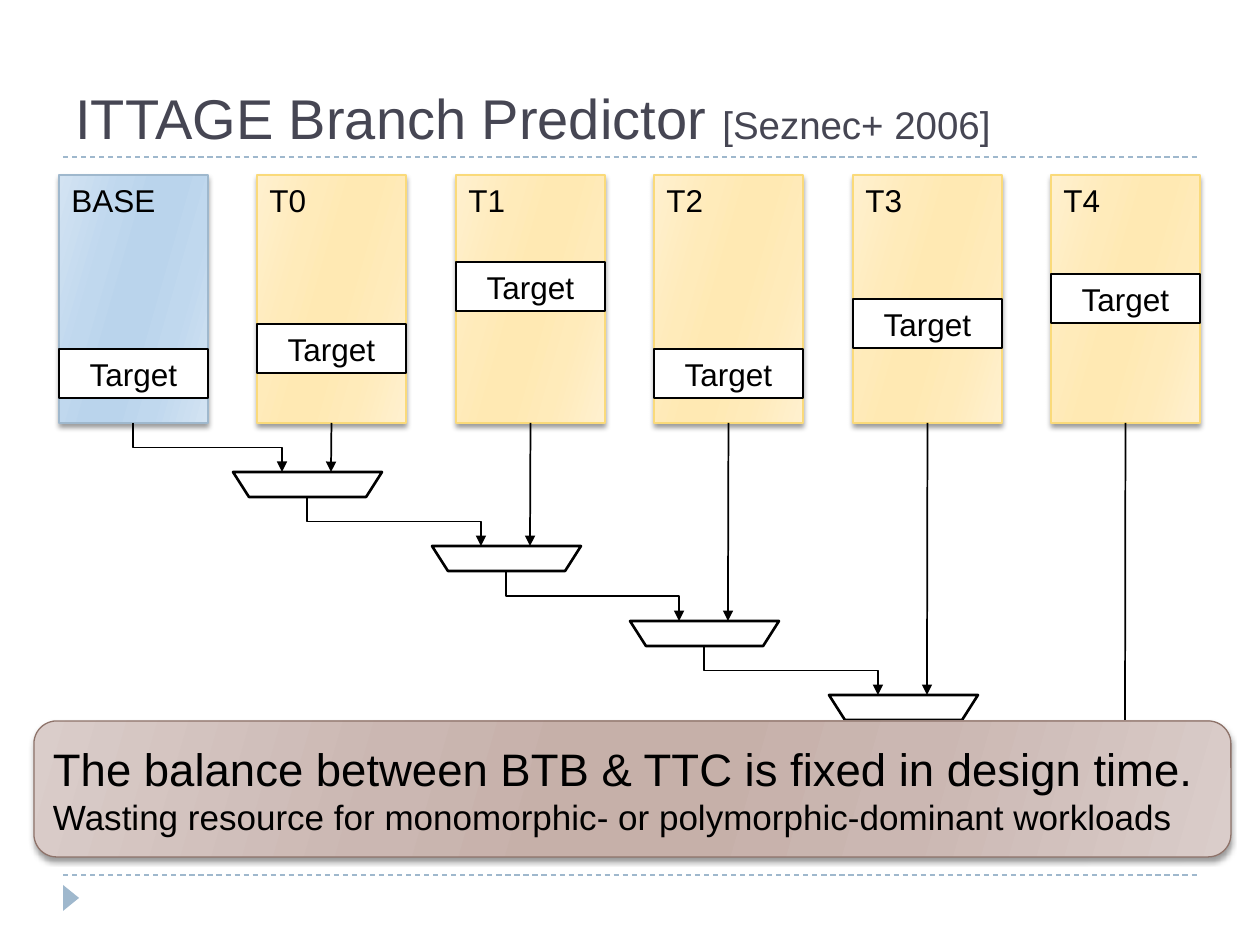
from pptx import Presentation
from pptx import util as u
from pptx.dml.color import RGBColor
from pptx.enum import dml, shapes, text
from pptx.oxml import parse_xml
from pptx.oxml.ns import nsdecls, qn

SCALE = 914400 / 126
BLACK = RGBColor(0, 0, 0)
WHITE = RGBColor(255, 255, 255)
SLATE = RGBColor(0x46, 0x46, 0x53)
BLUE = RGBColor(0x9F, 0xB8, 0xCD)
GOLD = RGBColor(0xFA, 0xDA, 0x7A)
BROWN = RGBColor(0x8E, 0x73, 0x6A)
SKY = [RGBColor(0xD3, 0xE3, 0xF2), RGBColor(0xC0, 0xD8, 0xEE), RGBColor(0xBA, 0xD4, 0xEC)]
CREAM = [RGBColor(0xFF, 0xF0, 0xCF), RGBColor(0xFF, 0xEB, 0xBA), RGBColor(0xFF, 0xE9, 0xB3)]
ROSE = [RGBColor(0xDA, 0xCD, 0xCA), RGBColor(0xCB, 0xB7, 0xB2), RGBColor(0xC6, 0xB0, 0xA9)]
KIND = shapes.MSO_SHAPE
MIDDLE = text.MSO_ANCHOR.MIDDLE
COL_W, COL_H = 149, 248
MUX_H = 25


def px(*vals):
    return [u.Emu(round(v * SCALE)) for v in vals]


def style(item, form):
    for key, val in form.items():
        setattr(item, key, val)


def write(shape, rows, align=text.PP_ALIGN.LEFT, **form):
    frame = shape.text_frame
    style(frame, {"word_wrap": True, **form})
    for i, row in enumerate(rows):
        para = frame.add_paragraph() if i else frame.paragraphs[0]
        para.alignment = align
        for words, size, tint in row:
            run = para.add_run()
            run.text = words
            style(run.font, {"name": "Arial", "size": u.Pt(size)})
            run.font.color.rgb = tint


def shape(slide, kind, box, fill, edge=None, width=1.5):
    item = slide.shapes.add_shape(kind, *px(*box))
    item.shadow.inherit = False
    item.fill.solid()
    item.fill.fore_color.rgb = fill
    if edge is None:
        item.line.fill.background()
    else:
        item.line.color.rgb = edge
        item.line.width = u.Pt(width)
    return item


def panel(slide, kind, box, tones, edge):
    item = shape(slide, kind, box, WHITE, edge, 0.75)
    item.fill.gradient()
    props = item._element.spPr
    stops = "".join(
        f'<a:gs pos="{pos * 1000}"><a:srgbClr val="{tone}"/></a:gs>'
        for pos, tone in zip((0, 30, 45, 55, 73, 100), tones + tones[::-1]))
    props.replace(props.find(qn("a:gradFill")), parse_xml(
        f'<a:gradFill {nsdecls("a")} rotWithShape="1"><a:gsLst>{stops}</a:gsLst>'
        '<a:lin ang="960000" scaled="1"/></a:gradFill>'))
    props.find(qn("a:effectLst")).append(parse_xml(
        f'<a:outerShdw {nsdecls("a")} blurRad="38100" dist="25400" dir="5400000" '
        'rotWithShape="0"><a:srgbClr val="000000"><a:alpha val="40000"/>'
        '</a:srgbClr></a:outerShdw>'))
    return item


def line(slide, kind, ends, tint, width):
    item = slide.shapes.add_connector(kind, *px(*ends))
    item.line.color.rgb = tint
    item.line.width = u.Pt(width)
    item._element.spPr.append(parse_xml(f'<a:effectLst {nsdecls("a")}/>'))
    return item


def arrow(slide, x1, y1, x2, y2, root=None):
    if x1 == x2:
        item = line(slide, shapes.MSO_CONNECTOR.STRAIGHT, (x1, y1, x2, y2), BLACK, 1)
        if root is not None:
            item.begin_connect(root, 2)
    else:
        mid_x, mid_y = (x1 + x2) / 2, (y1 + y2) / 2
        half_w, half_h = (y2 - y1) / 2, (x2 - x1) / 2
        ends = (mid_x - half_w, mid_y - half_h, mid_x + half_w, mid_y + half_h)
        item = line(slide, shapes.MSO_CONNECTOR.ELBOW, ends, BLACK, 1)
        form = item._element.spPr.find(qn("a:xfrm"))
        form.set("rot", "16200000")
        form.set("flipH", "1")
    item.line._get_or_add_ln().append(parse_xml(
        f'<a:tailEnd {nsdecls("a")} type="triangle"/>'))


def table(slide, x, y, name, drop, tones, edge):
    body = panel(slide, KIND.RECTANGLE, (x, y, COL_W, COL_H), tones, edge)
    entry = shape(slide, KIND.RECTANGLE, (x, y + drop, COL_W, 49), WHITE, BLACK)
    write(entry, [[("Target", 18, BLACK)]], text.PP_ALIGN.CENTER, vertical_anchor=MIDDLE)
    label = slide.shapes.add_textbox(*px(x, y, COL_W, 50))
    write(label, [[(name, 18, BLACK)]], auto_size=text.MSO_AUTO_SIZE.SHAPE_TO_FIT_TEXT)
    return body


def mux(slide, x, y):
    item = shape(slide, KIND.TRAPEZOID, (x, y, COL_W, MUX_H), WHITE, BLACK)
    item.rotation = 180
    item.adjustments[0] = 0.638


def chain(slide, x, y):
    names = ("BASE", "T0", "T1", "T2", "T3", "T4")
    drops = (174, 149, 87, 174, 124, 99)
    mid = COL_W // 2
    foot = y + COL_H
    last_x, last_y = x + mid, foot
    for i, (name, drop) in enumerate(zip(names, drops)):
        left = x + 397 * i // 2
        tones, edge = (CREAM, GOLD) if i else (SKY, BLUE)
        body = table(slide, left, y, name, drop, tones, edge)
        if i:
            top = foot + 49 + 149 * (i - 1) // 2
            gate = left - 24
            arrow(slide, left + mid, foot, left + mid, top, body)
            arrow(slide, last_x, last_y, gate + 49, top)
            mux(slide, gate, top)
            last_x, last_y = gate + mid, top + MUX_H
    arrow(slide, last_x, last_y, last_x, last_y + 49)


def frame(slide, x, y, w, h):
    for level in (y, y + h):
        rule = line(slide, shapes.MSO_CONNECTOR.STRAIGHT, (x, level, x + w, level), BLUE, 0.75)
        rule.line.dash_style = dml.MSO_LINE.DASH
    mark = shape(slide, KIND.ISOSCELES_TRIANGLE, (x - 5, y + h + 15, 26, 16), BLUE)
    mark.rotation = 90


def title(slide, *box):
    item = slide.shapes.add_textbox(*px(*box))
    write(item, [[("ITTAGE Branch Predictor ", 32, SLATE), ("[Seznec+ 2006]", 22, SLATE)]],
          vertical_anchor=text.MSO_ANCHOR.BOTTOM)


def banner(slide, *box):
    item = panel(slide, KIND.ROUNDED_RECTANGLE, box, ROSE, BROWN)
    write(item, [
        [("The balance between BTB & TTC is fixed in design time.", 26, BLACK)],
        [("Wasting resource for monomorphic- or polymorphic-dominant workloads", 20, BLACK)],
    ], vertical_anchor=MIDDLE)


def main():
    deck = Presentation()
    style(deck, {"slide_width": u.Inches(10), "slide_height": u.Inches(7.5)})
    slide = deck.slides.add_slide(deck.slide_layouts[6])
    frame(slide, 63, 157, 1134, 718)
    title(slide, 63, 21, 1134, 136)
    chain(slide, 59, 175)
    banner(slide, 34, 721, 1197, 136)
    deck.save("out.pptx")


if __name__ == "__main__":
    main()
